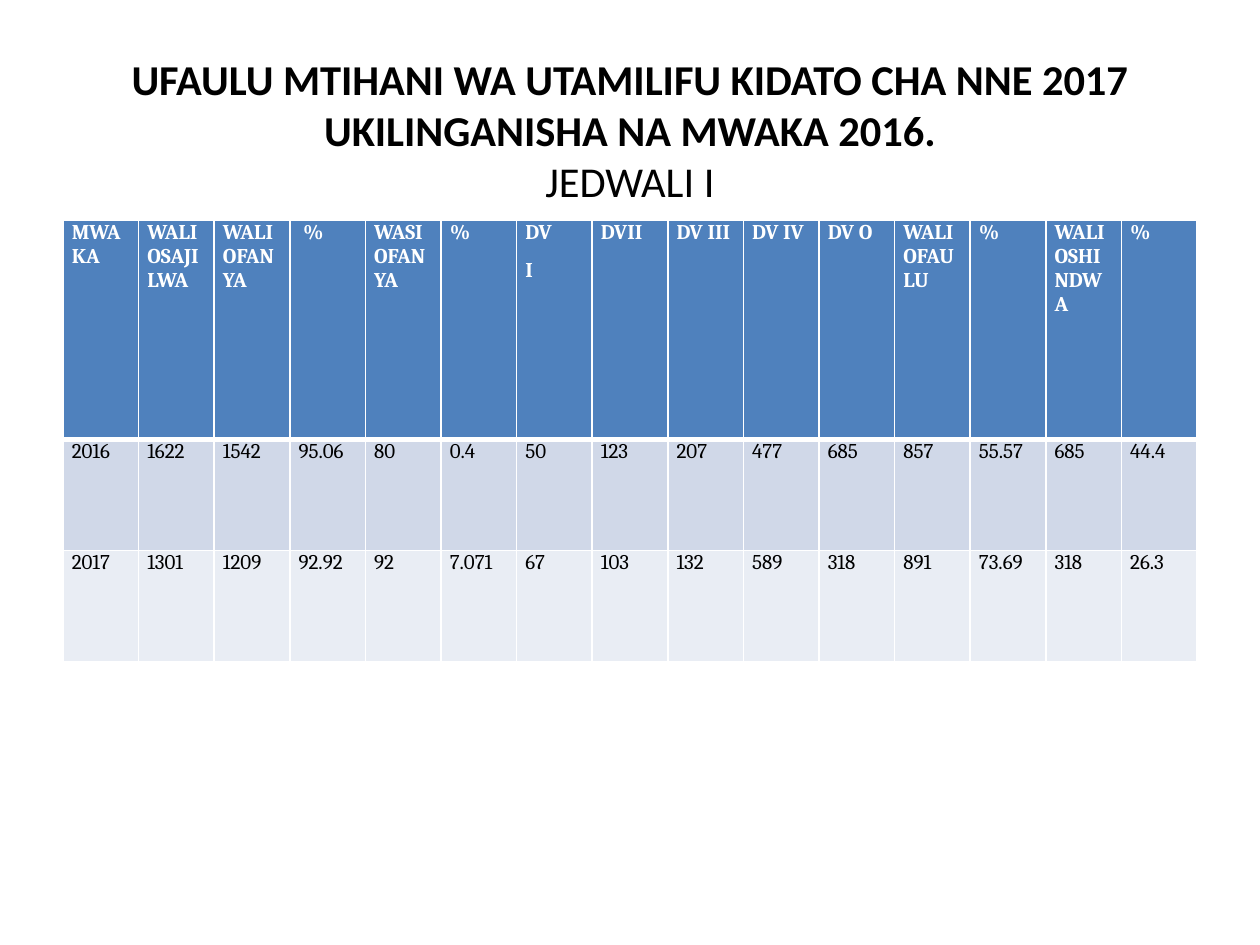
from dataclasses import dataclass
from lxml.etree import SubElement as Sub
from pptx import Presentation
from pptx.dml.color import RGBColor as RGB
from pptx.enum.text import MSO_ANCHOR as Anchor, PP_ALIGN as Align
from pptx.oxml.ns import qn
from pptx.util import Inches, Pt

# Content
TITLE = (
    "UFAULU MTIHANI WA UTAMILIFU KIDATO CHA NNE 2017 UKILINGANISHA NA MWAKA 2016.",
    "JEDWALI I",
)
HEAD = ["MWAKA", "WALIOSAJILWA", "WALIOFANYA", " %", "WASIOFANYA", "%",
        "DV\nI", "DVII", "DV III", "DV IV", "DV O",
        "WALIOFAULU", "%", "WALIOSHINDWA", "%"]
DATA = [
    ["2016", "1622", "1542", "95.06", "80", "0.4", "50", "123", "207",
     "477", "685", "857", "55.57", "685", "44.4"],
    ["2017", "1301", "1209", "92.92", "92", "7.071", "67", "103", "132",
     "589", "318", "891", "73.69", "318", "26.3"],
]


@dataclass(frozen=True)
class Theme:
    title: str = "Calibri"
    body: str = "Cambria"
    big: float = 24.3
    small: float = 12
    ink: str = "000000"
    light: str = "FFFFFF"
    fills: tuple = ("4F81BD", "D0D8E8", "E9EDF4")
    thin: float = 1
    thick: float = 3


T = Theme()


def style(run, face, size, color, bold):
    font = run.font
    font.name, font.size, font.bold = face, Pt(size), bold
    font.color.rgb = RGB.from_string(color)


def edge(cell, side, width):
    line = Sub(cell._tc.get_or_add_tcPr(), qn("a:ln" + side), w=str(Pt(width)))
    Sub(Sub(line, qn("a:solidFill")), qn("a:srgbClr"), val=T.light)


def add_title(slide):
    box = slide.shapes.add_textbox(Inches(0.5), Inches(0.3), Inches(9), Inches(1.25))
    frame = box.text_frame
    frame.word_wrap = True
    frame.vertical_anchor = Anchor.TOP
    frame.margin_top = Inches(0.12)
    frame.text = "\v".join(TITLE)
    para = frame.paragraphs[0]
    para.alignment = Align.CENTER
    for run, bold in zip(para.runs, (True, False)):
        style(run, T.title, T.big, T.ink, bold)


def fill_cell(cell, text, row):
    head = row == 0
    cell.margin_left = cell.margin_right = Inches(0.07)
    cell.margin_top = cell.margin_bottom = 0
    # Thick rule between the header and the data
    widths = {"L": T.thin, "R": T.thin,
              "T": T.thick if row == 1 else T.thin,
              "B": T.thick if head else T.thin}
    for side, width in widths.items():
        edge(cell, side, width)
    cell.fill.solid()
    cell.fill.fore_color.rgb = RGB.from_string(T.fills[row])
    cell.text_frame.text = text
    for para in cell.text_frame.paragraphs:
        para.alignment = Align.JUSTIFY
        para.space_after = Pt(8)
        for run in para.runs:
            style(run, T.body, T.small, T.light if head else T.ink, head)


def add_grid(slide):
    rows = [HEAD, *DATA]
    table = slide.shapes.add_table(len(rows), len(HEAD), Inches(0.5), Inches(1.75),
                                   Inches(9), Inches(3.5)).table
    for col in table.columns:
        col.width = Inches(9 / len(HEAD))
    for row, high in zip(table.rows, (1.74, 0.88, 0.88)):
        row.height = Inches(high)
    for r, row in enumerate(rows):
        for c, text in enumerate(row):
            fill_cell(table.cell(r, c), text, r)


def main():
    deck = Presentation()
    deck.slide_width, deck.slide_height = Inches(10), Inches(7.5)
    slide = deck.slides.add_slide(deck.slide_layouts[6])
    add_title(slide)
    add_grid(slide)
    deck.save("out.pptx")


if __name__ == "__main__":
    main()
